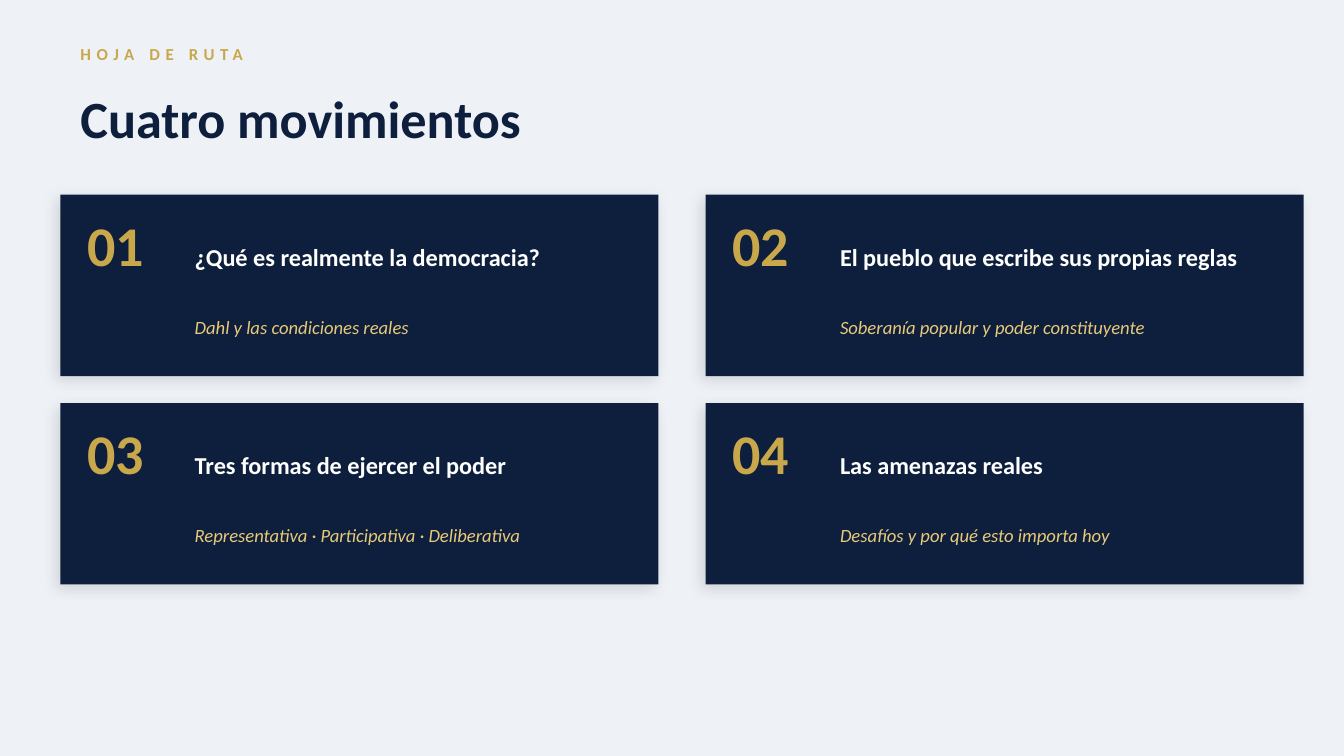
from lxml.etree import SubElement
from pptx import Presentation
from pptx.dml.color import RGBColor
from pptx.enum.shapes import MSO_SHAPE
from pptx.enum.text import MSO_ANCHOR, MSO_AUTO_SIZE, PP_ALIGN
from pptx.oxml.ns import qn
from pptx.util import Cm, Pt

FONT = "Calibri"
NAVY, GOLD, PALE_GOLD = "0D1F3C", "C9A84C", "E8C97A"
WHITE, BACKGROUND = "FFFFFF", "EEF2F7"

CARDS = [
    ("01", "¿Qué es realmente la democracia?", "Dahl y las condiciones reales"),
    ("02", "El pueblo que escribe sus propias reglas",
     "Soberanía popular y poder constituyente"),
    ("03", "Tres formas de ejercer el poder",
     "Representativa · Participativa · Deliberativa"),
    ("04", "Las amenazas reales", "Desafíos y por qué esto importa hoy"),
]


def paint(color, value):
    color.rgb = RGBColor.from_string(value)


def fill_text(shape, text, size, color, bold=False, italic=False,
              anchor=MSO_ANCHOR.MIDDLE):
    """Put one left-aligned run in a shape without margins."""
    tf = shape.text_frame
    tf.word_wrap = True
    tf.auto_size = MSO_AUTO_SIZE.NONE
    tf.vertical_anchor = anchor
    tf.margin_left = tf.margin_right = tf.margin_top = tf.margin_bottom = 0
    p = tf.paragraphs[0]
    p.alignment = PP_ALIGN.LEFT
    r = p.add_run()
    r.text = text
    r.font.name, r.font.size = FONT, Pt(size)
    r.font.bold, r.font.italic = bold, italic
    paint(r.font.color, color)
    return r


def add_text(s, x, y, w, h, *args, **kwargs):
    box = s.shapes.add_textbox(Cm(x), Cm(y), Cm(w), Cm(h))
    return fill_text(box, *args, **kwargs)


def add_soft_shadow(sp):
    sp.shadow.inherit = False
    effects = sp._element.spPr.find(qn("a:effectLst"))
    shadow = SubElement(effects, qn("a:outerShdw"), blurRad=str(Pt(8)),
                        dist=str(Pt(3)), dir=str(135 * 60000),
                        algn="bl", rotWithShape="0")
    black = SubElement(shadow, qn("a:srgbClr"), val="000000")
    SubElement(black, qn("a:alpha"), val="12000")


def add_header(s, x, y, w):
    eyebrow = add_text(s, x, y, w, 0.76, "HOJA DE RUTA", 9, GOLD, bold=True)
    eyebrow.font._element.set("spc", "300")
    title = s.shapes.title
    title.left, title.top = Cm(x), Cm(y + 0.76)
    title.width, title.height = Cm(w), Cm(1.65)
    fill_text(title, "Cuatro movimientos", 28, NAVY, bold=True)


def add_card(s, x, y, w, h, number, heading, detail):
    sp = s.shapes.add_shape(MSO_SHAPE.RECTANGLE, Cm(x), Cm(y), Cm(w), Cm(h))
    sp.fill.solid()
    paint(sp.fill.fore_color, NAVY)
    sp.line.fill.background()
    add_soft_shadow(sp)
    add_text(s, x + 0.51, y + 0.3, 2.03, 1.78, number, 30, GOLD, bold=True,
             anchor=MSO_ANCHOR.TOP)
    text_x, text_w = x + 2.54, w - 2.92
    add_text(s, text_x, y + 0.38, text_w, 1.57, heading, 13, WHITE, bold=True)
    add_text(s, text_x, y + 1.96, text_w, 1.07, detail, 10, PALE_GOLD,
             italic=True)


def add_card_grid(s, x, y, w, h, cards, columns=2, gap_x=0.89, gap_y=0.51):
    rows = -(-len(cards) // columns)
    card_w = (w - gap_x * (columns - 1)) / columns
    card_h = (h - gap_y * (rows - 1)) / rows
    for i, card in enumerate(cards):
        row, col = divmod(i, columns)
        add_card(s, x + col * (card_w + gap_x), y + row * (card_h + gap_y),
                 card_w, card_h, *card)


def main():
    prs = Presentation()
    prs.slide_width, prs.slide_height = Cm(25.4), Cm(14.29)
    s = prs.slides.add_slide(prs.slide_layouts.get_by_name("Title Only"))
    s.background.fill.solid()
    paint(s.background.fill.fore_color, BACKGROUND)
    add_header(s, 1.52, 0.64, 22.35)
    add_card_grid(s, 1.14, 3.68, 23.5, 7.37, CARDS)
    prs.save("out.pptx")


if __name__ == "__main__":
    main()
